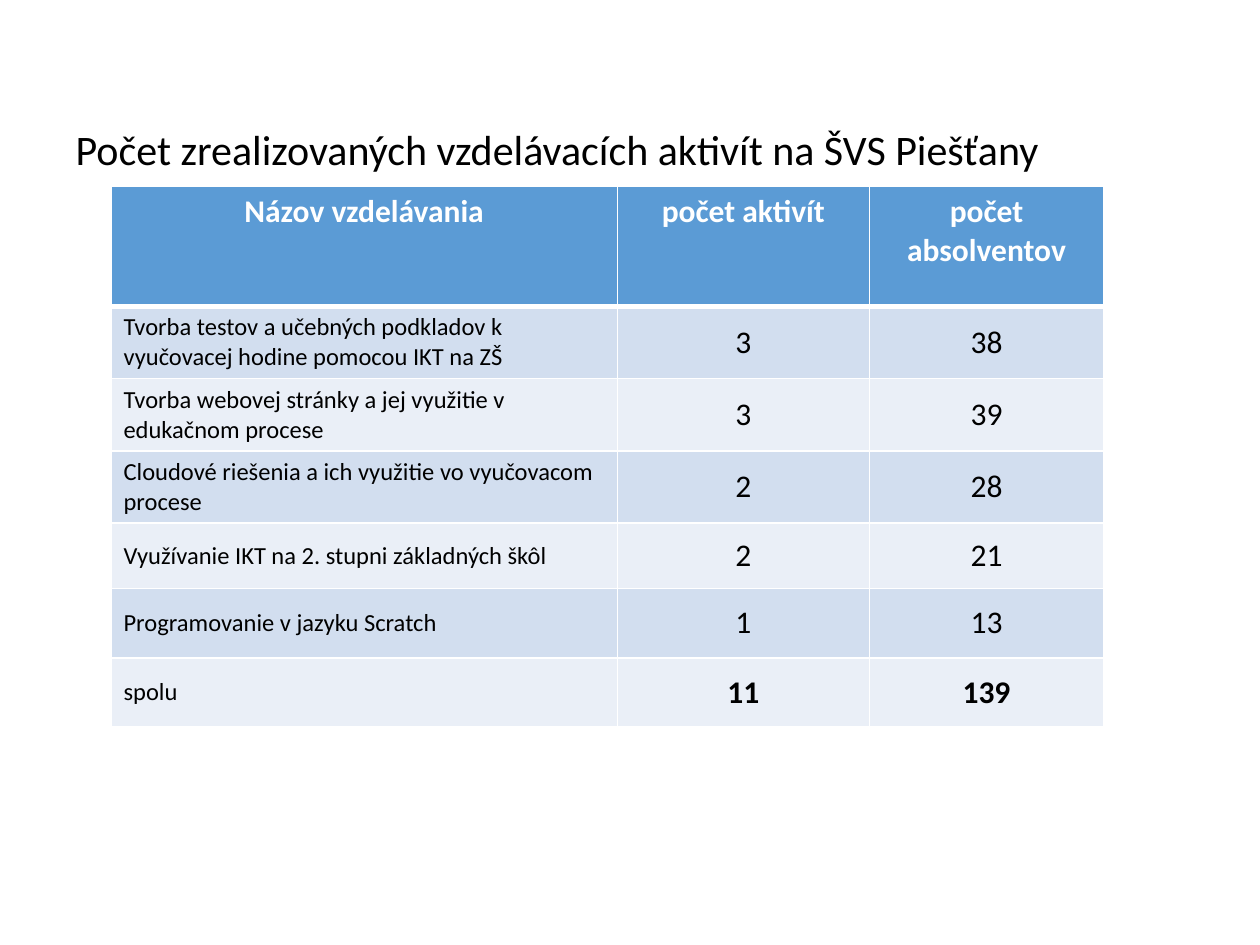
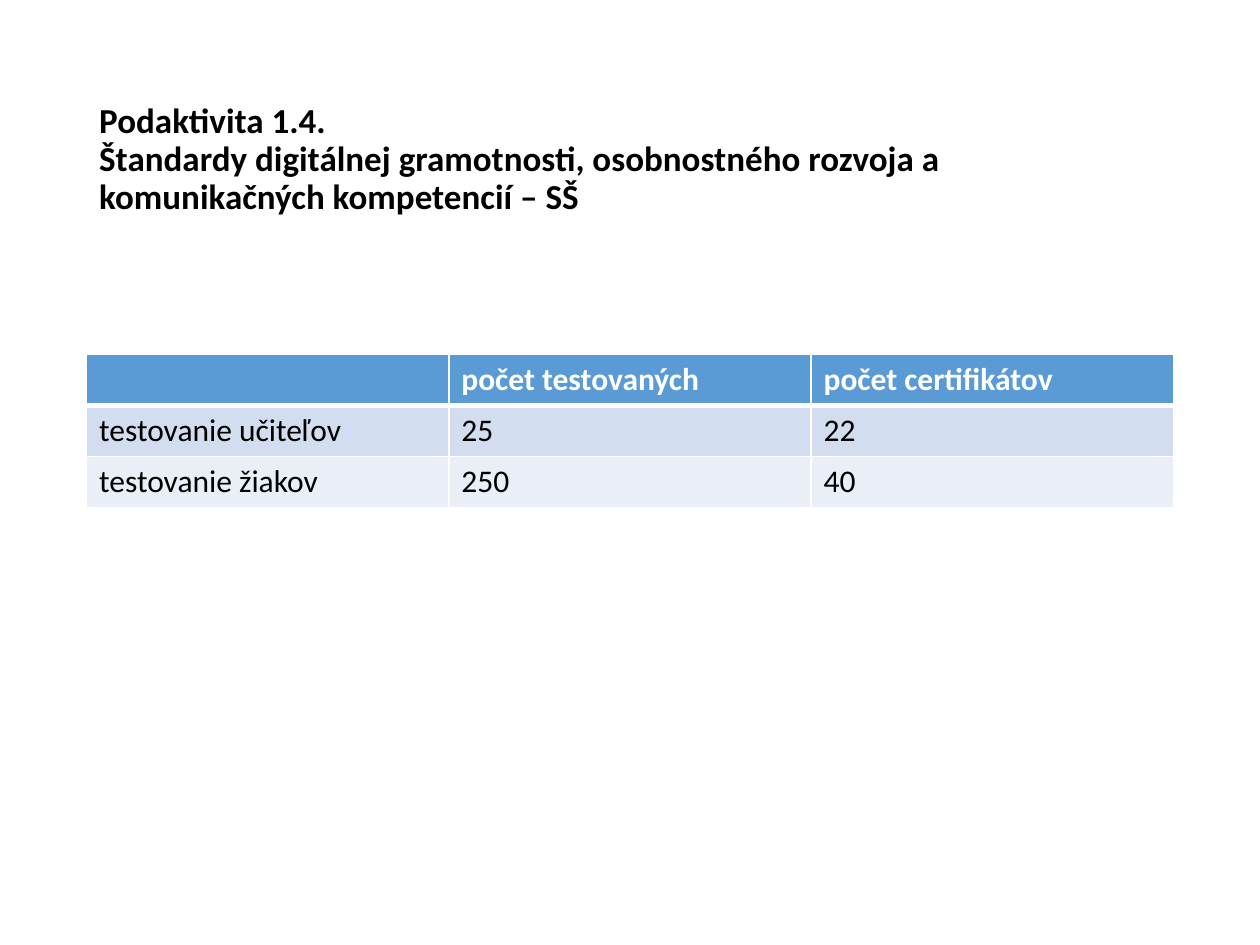
"""Build two slides with tables of training and testing counts."""
from dataclasses import dataclass

from lxml import etree
from pptx import Presentation
from pptx.dml.color import RGBColor
from pptx.enum.text import MSO_ANCHOR, MSO_AUTO_SIZE, PP_ALIGN
from pptx.oxml.ns import qn
from pptx.util import Pt

LEFT, CENTER = PP_ALIGN.LEFT, PP_ALIGN.CENTER
TOP, MIDDLE = MSO_ANCHOR.TOP, MSO_ANCHOR.MIDDLE
FIXED = MSO_AUTO_SIZE.NONE


@dataclass(frozen=True)
class Theme:
    font: str = "Calibri"
    ink: str = "000000"
    white: str = "FFFFFF"
    head: str = "5B9BD5"
    bands: tuple = ("D2DEEF", "EAEFF7")
    large: int = 24
    title: int = 20
    body: int = 18
    small: int = 14


theme = Theme()


def write(para, text, size, color, bold=False):
    run = para.add_run()
    run.text = text
    font = run.font
    font.name, font.size, font.bold = theme.font, Pt(size), bold
    font.color.rgb = RGBColor.from_string(color)


def border(cell, bottom):
    props = cell._tc.get_or_add_tcPr()
    for spot, (side, width) in enumerate(zip("LRTB", (1, 1, 1, bottom))):
        line = etree.Element(qn(f"a:ln{side}"), w=str(Pt(width)))
        fill = etree.SubElement(line, qn("a:solidFill"))
        etree.SubElement(fill, qn("a:srgbClr"), val=theme.white)
        props.insert(spot, line)


slides = [
    dict(
        title=["Počet zrealizovaných vzdelávacích aktivít na ŠVS Piešťany"],
        box=(36, 70, 620.6, 36), size=theme.large, bold=False,
        spot=(63.4, 106.6), widths=(289.4, 144, 133.9),
        heights=(68.4, 39, 39, 39, 37.4, 39.6, 39.6),
        label=theme.small, align=CENTER, anchor=MIDDLE, total=6,
        rows=[
            ("Názov vzdelávania", "počet aktivít", "počet absolventov"),
            ("Tvorba testov a učebných podkladov k vyučovacej hodine pomocou IKT na ZŠ", "3", "38"),
            ("Tvorba webovej stránky a jej využitie v edukačnom procese", "3", "39"),
            ("Cloudové riešenia a ich využitie vo vyučovacom procese", "2", "28"),
            ("Využívanie IKT na 2. stupni základných škôl", "2", "21"),
            ("Programovanie v jazyku Scratch", "1", "13"),
            ("spolu", "11", "139"),
        ],
    ),
    dict(
        title=["Podaktivita 1.4.",
               "Štandardy digitálnej gramotnosti, osobnostného rozvoja a komunikačných kompetencií – SŠ"],
        box=(49.5, 55.4, 621, 104.4), size=theme.title, bold=True,
        spot=(49.5, 202.5), widths=(207,) * 3, heights=(29.2,) * 3,
        label=theme.body, align=LEFT, anchor=TOP, total=None,
        rows=[
            ("", "počet testovaných", "počet certifikátov"),
            ("testovanie učiteľov", "25", "22"),
            ("testovanie žiakov", "250", "40"),
        ],
    ),
]

deck = Presentation()
deck.slide_width, deck.slide_height = Pt(720), Pt(540)

for data in slides:
    slide = deck.slides.add_slide(deck.slide_layouts[5])
    title = slide.shapes.title
    title.left, title.top, title.width, title.height = map(Pt, data["box"])
    frame = title.text_frame
    frame.auto_size, frame.word_wrap = FIXED, True
    frame.vertical_anchor = TOP
    para = frame.paragraphs[0]
    para.alignment, para.line_spacing = LEFT, 0.9
    for index, text in enumerate(data["title"]):
        if index:
            para.add_line_break()
        write(para, text, data["size"], theme.ink, data["bold"])

    rows, widths, heights = data["rows"], data["widths"], data["heights"]
    left, top = data["spot"]
    table = slide.shapes.add_table(
        len(rows), len(widths), Pt(left), Pt(top), Pt(sum(widths)), Pt(sum(heights))
    ).table
    for column, width in zip(table.columns, widths):
        column.width = Pt(width)
    for r, (texts, height) in enumerate(zip(rows, heights)):
        table.rows[r].height = Pt(height)
        head = r == 0
        for c, text in enumerate(texts):
            cell = table.cell(r, c)
            cell.fill.solid()
            shade = theme.head if head else theme.bands[(r - 1) % 2]
            cell.fill.fore_color.rgb = RGBColor.from_string(shade)
            border(cell, 3 if head else 1)
            cell.vertical_anchor = TOP if head else data["anchor"]
            para = cell.text_frame.paragraphs[0]
            para.alignment = data["align"] if head or c else LEFT
            if text:
                size = theme.body if head or c else data["label"]
                color = theme.white if head else theme.ink
                bold = head or (r == data["total"] and c > 0)
                write(para, text, size, color, bold)

deck.save("out.pptx")
